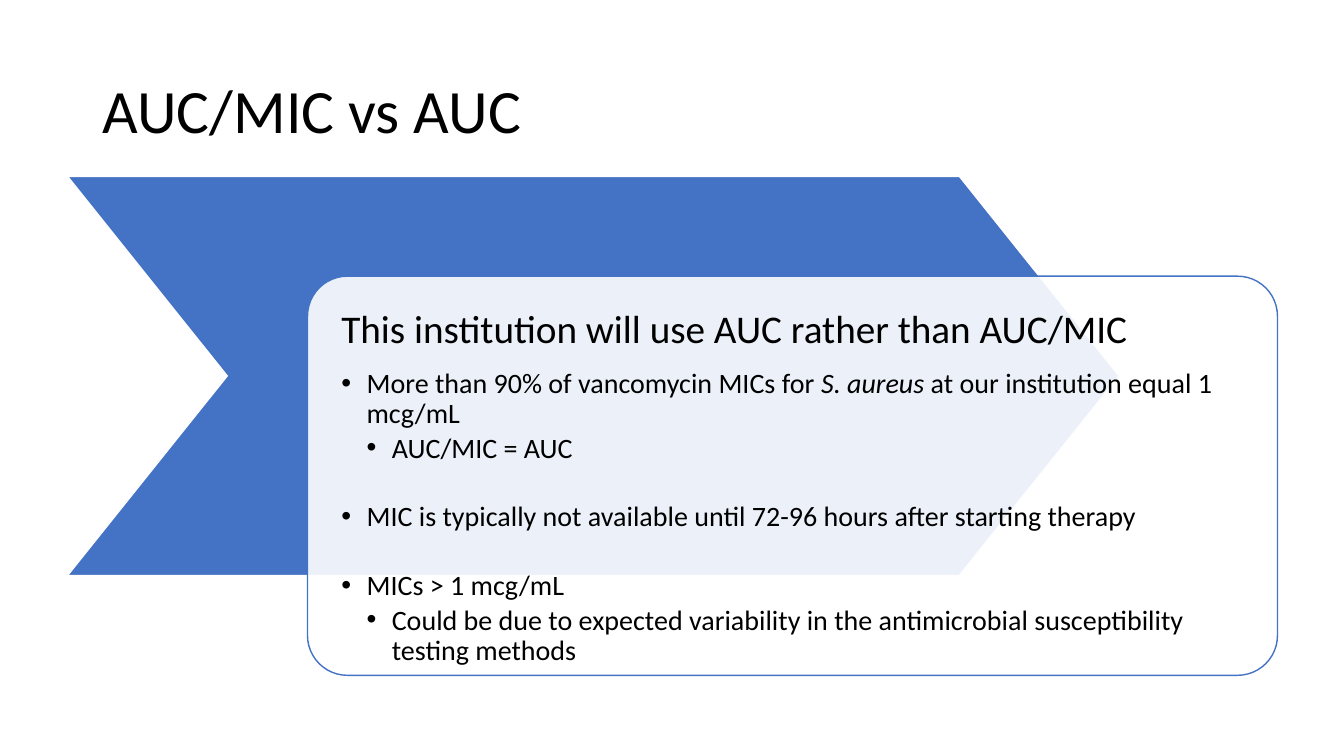
from pptx import Presentation
from pptx.dml.color import RGBColor
from pptx.enum.shapes import MSO_SHAPE
from pptx.enum.text import MSO_ANCHOR
from pptx.oxml.ns import qn
from pptx.util import Inches, Pt
from lxml.etree import SubElement

COLORS = {"blue": "4472C4", "white": "FFFFFF", "black": "000000"}
FONT = "Calibri"
TITLE = "AUC/MIC vs AUC"
HEADING = "This institution will use AUC rather than AUC/MIC"
# (bullet level, space after in points, runs as (text, italic))
TIGHT, WIDE = 3, 27.5
POINTS = [
    (1, TIGHT, [("More than 90% of vancomycin MICs for ", False),
                ("S. aureus", True),
                (" at our institution equal 1 mcg/mL", False)]),
    (2, WIDE, [("AUC/MIC = AUC", False)]),
    (1, WIDE, [("MIC is typically not available until 72-96 hours after starting therapy", False)]),
    (1, TIGHT, [("MICs > 1 mcg/mL", False)]),
    (2, TIGHT, [("Could be due to expected variability in the antimicrobial "
                 "susceptibility testing methods", False)]),
]

SLIDE_W, SLIDE_H = 13.33, 7.5
PANEL_H = 3.96
CHEVRON = (0.67, 1.75, 10.43, PANEL_H)
CARD = (3.05, CHEVRON[1] + PANEL_H / 4, 9.62, PANEL_H)
CARD_PAD = 0.116  # a rounded corner's inset: 0.29 of its radius
TEXT_INSET = 0.22
INDENT = 0.25


def color(name):
    return RGBColor.from_string(COLORS[name])


def add_panel(slide, preset, box, adjustment, fill, line):
    panel = slide.shapes.add_shape(preset, *map(Inches, box))
    panel.shadow.inherit = False
    panel.adjustments[0] = adjustment
    panel.fill.solid()
    panel.fill.fore_color.rgb = color(fill)
    panel.line.color.rgb = color(line)
    panel.line.width = Pt(1)
    return panel


def add_text_frame(slide, box, anchor):
    frame = slide.shapes.add_textbox(*map(Inches, box)).text_frame
    frame.word_wrap = True
    frame.vertical_anchor = anchor
    return frame


def fill_paragraph(paragraph, runs, size, after=0):
    paragraph.line_spacing = 0.9
    paragraph.space_after = Pt(after)
    for text, italic in runs:
        run = paragraph.add_run()
        run.text = text
        run.font.name = FONT
        run.font.size = Pt(size)
        run.font.italic = italic
        run.font.color.rgb = color("black")


def add_bullet(paragraph, level):
    paragraph.level = level
    properties = paragraph._p.get_or_add_pPr()
    properties.set("marL", str(Inches(INDENT * level)))
    properties.set("indent", str(-Inches(INDENT)))
    SubElement(properties, qn("a:buFont")).set("typeface", "Arial")
    SubElement(properties, qn("a:buChar")).set("char", "•")


def main():
    deck = Presentation()
    deck.slide_width, deck.slide_height = Inches(SLIDE_W), Inches(SLIDE_H)
    slide = deck.slides.add_slide(deck.slide_layouts[6])

    title = add_text_frame(slide, (0.92, 0.4, 11.5, 1.45), MSO_ANCHOR.MIDDLE)
    fill_paragraph(title.paragraphs[0], [(TITLE, False)], 44)

    add_panel(slide, MSO_SHAPE.CHEVRON, CHEVRON, 0.4, "blue", "white")
    card = add_panel(slide, MSO_SHAPE.ROUNDED_RECTANGLE, CARD, 0.1, "white", "blue")
    card_fill = card.fill._xPr.find(qn("a:solidFill"))[0]
    SubElement(card_fill, qn("a:alpha")).set("val", "90000")

    left, top, width, height = CARD
    body_box = (left + CARD_PAD, top + CARD_PAD,
                width - 2 * CARD_PAD, height - 2 * CARD_PAD)
    body = add_text_frame(slide, body_box, MSO_ANCHOR.TOP)
    body.margin_left = body.margin_right = Inches(TEXT_INSET)
    body.margin_top = body.margin_bottom = Inches(TEXT_INSET)
    fill_paragraph(body.paragraphs[0], [(HEADING, False)], 28, 12)
    for level, after, runs in POINTS:
        paragraph = body.add_paragraph()
        fill_paragraph(paragraph, runs, 20, after)
        add_bullet(paragraph, level)

    deck.save("out.pptx")


if __name__ == "__main__":
    main()
